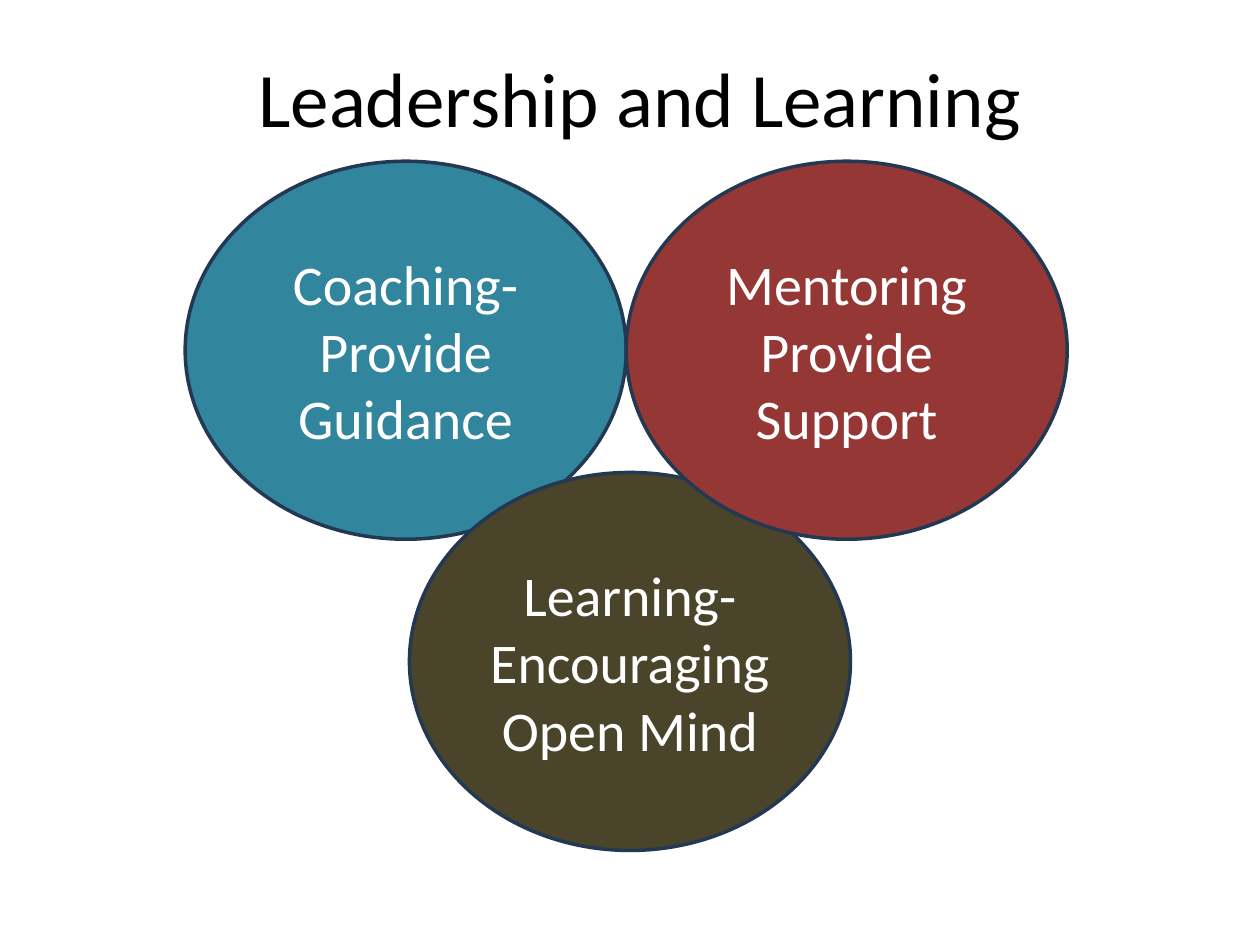
"""Build the Leadership and Learning slide with three overlapping ellipses."""
from pptx import Presentation
from pptx.dml.color import RGBColor
from pptx.enum.shapes import MSO_SHAPE
from pptx.enum.text import MSO_ANCHOR, PP_ALIGN
from pptx.util import Inches, Pt


def color(hex_value):
    return RGBColor.from_string(hex_value)


def write(frame, text, size=32, hex_value="FFFFFF", font="Calibri"):
    frame.word_wrap = True
    frame.vertical_anchor = MSO_ANCHOR.MIDDLE
    frame.text = text
    for paragraph in frame.paragraphs:
        paragraph.alignment = PP_ALIGN.CENTER
        for run in paragraph.runs:
            run.font.size = Pt(size)
            run.font.name = font
            run.font.color.rgb = color(hex_value)


presentation = Presentation()
presentation.slide_width = Inches(10)
presentation.slide_height = Inches(7.5)
slide = presentation.slides.add_slide(presentation.slide_layouts[5])

heading = slide.shapes.title
heading.left, heading.top = Inches(0.58), Inches(0.14)
heading.width, heading.height = Inches(9), Inches(1.25)
write(heading.text_frame, "Leadership and Learning", size=44, hex_value="000000")

roles = [
    ("Coaching-\nProvide Guidance", 1.47, 1.28, "31859C"),
    ("Learning-\nEncouraging\nOpen Mind", 3.25, 3.75, "4A452A"),
    ("Mentoring\nProvide Support", 4.97, 1.28, "953735"),
]
for wording, left, top, fill in roles:
    role = slide.shapes.add_shape(
        MSO_SHAPE.OVAL, Inches(left), Inches(top), Inches(3.5), Inches(3)
    )
    role.shadow.inherit = False
    role.fill.solid()
    role.fill.fore_color.rgb = color(fill)
    role.line.color.rgb = color("233953")
    role.line.width = Pt(2)
    write(role.text_frame, wording)

presentation.save("out.pptx")
